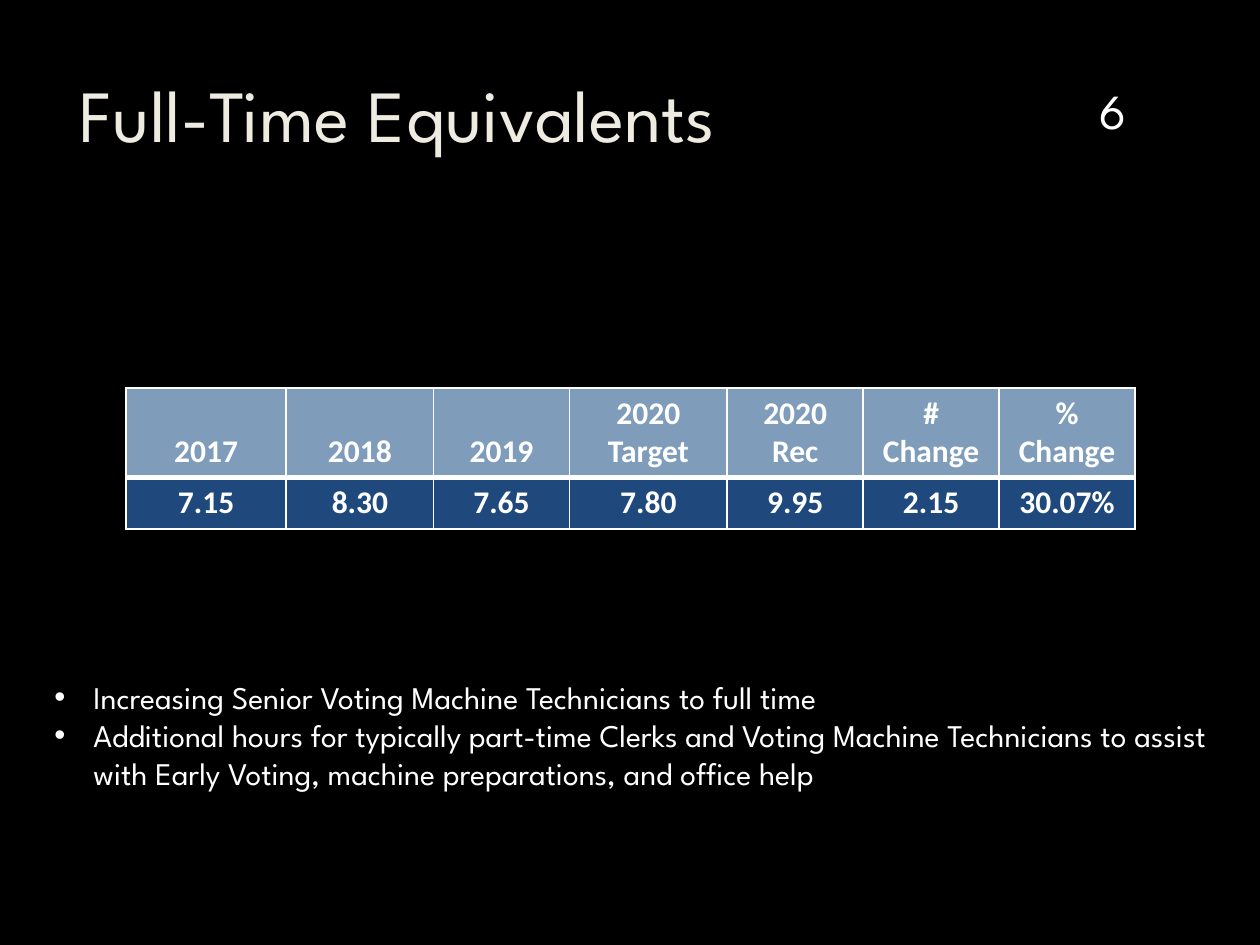
from pptx import Presentation
from pptx.dml.color import RGBColor
from pptx.enum.text import MSO_ANCHOR, MSO_AUTO_SIZE, PP_ALIGN
from pptx.oxml.ns import qn
from pptx.util import Cm, Pt
from lxml import etree

TOP, BOTTOM = MSO_ANCHOR.TOP, MSO_ANCHOR.BOTTOM
LEFT, CENTER = PP_ALIGN.LEFT, PP_ALIGN.CENTER
NO_FIT = MSO_AUTO_SIZE.NONE

HEADING_FONT, TABLE_FONT = "League Spartan", "Calibri"
BLACK, WHITE, CREAM = "000000", "FFFFFF", "EEECE1"
HEADER_BLUE, VALUE_BLUE = "7F9DBB", "1F497D"

FTE_COLUMNS = [
    # header, value, width in cm
    ("2017", "7.15", 3.23),
    ("2018", "8.30", 2.97),
    ("2019", "7.65", 2.74),
    ("2020 Target", "7.80", 3.18),
    ("2020\nRec", "9.95", 2.74),
    ("#\nChange", "2.15", 2.74),
    ("%\nChange", "30.07%", 2.74),
]
ROW_HEIGHTS = (1.78, 1.04)
REASONS = [
    "Increasing Senior Voting Machine Technicians to full time",
    "Additional hours for typically part-time Clerks and Voting Machine "
    "Technicians to assist with Early Voting, machine preparations, and office help",
]


def color(hex_code):
    return RGBColor.from_string(hex_code)


def place(shape, box):
    shape.left, shape.top, shape.width, shape.height = (Cm(length) for length in box)


def format_text(frame, font_name, size, hex_code, align, bold=False):
    for paragraph in frame.paragraphs:
        paragraph.alignment = align
        for run in paragraph.runs:
            run.font.name = font_name
            run.font.size = Pt(size)
            run.font.bold = bold
            run.font.color.rgb = color(hex_code)


def add_title(slide, box):
    title = slide.shapes.title
    place(title, box)
    frame = title.text_frame
    frame.text = "Full-Time Equivalents"
    frame.vertical_anchor = TOP
    frame.auto_size = NO_FIT
    format_text(frame, HEADING_FONT, 42, CREAM, LEFT)


def add_page_number(slide, box):
    frame = slide.shapes.add_textbox(*(Cm(length) for length in box)).text_frame
    frame.word_wrap = True
    frame.vertical_anchor = BOTTOM
    frame.text = "6"
    format_text(frame, HEADING_FONT, 28, WHITE, CENTER)


def set_border(cell, side, width):
    line = etree.SubElement(cell._tc.get_or_add_tcPr(), qn(f"a:ln{side}"), w=str(Pt(width)))
    fill = etree.SubElement(line, qn("a:solidFill"))
    etree.SubElement(fill, qn("a:srgbClr"), val=WHITE)


def add_fte_table(slide, left, top):
    widths = [width for _, _, width in FTE_COLUMNS]
    table = slide.shapes.add_table(
        len(ROW_HEIGHTS), len(FTE_COLUMNS),
        Cm(left), Cm(top), Cm(sum(widths)), Cm(sum(ROW_HEIGHTS)),
    ).table
    for row, height in zip(table.rows, ROW_HEIGHTS):
        row.height = Cm(height)

    for column, (header, value, width) in enumerate(FTE_COLUMNS):
        table.columns[column].width = Cm(width)
        # A heavy rule separates the header from the values
        for row, text, fill, anchor, heavy_side in (
            (0, header, HEADER_BLUE, BOTTOM, "B"),
            (1, value, VALUE_BLUE, TOP, "T"),
        ):
            cell = table.cell(row, column)
            cell.text = text
            cell.vertical_anchor = anchor
            format_text(cell.text_frame, TABLE_FONT, 18, WHITE, CENTER, bold=True)
            for side in "LRTB":
                set_border(cell, side, 3 if side == heavy_side else 1)
            cell.fill.solid()
            cell.fill.fore_color.rgb = color(fill)


def add_reasons(slide, box):
    body = slide.placeholders[1]
    place(body, box)
    frame = body.text_frame
    frame.text = "\n".join(REASONS)
    frame.vertical_anchor = TOP
    frame.auto_size = NO_FIT
    indent = Cm(0.79)
    for paragraph in frame.paragraphs:
        properties = paragraph._p.get_or_add_pPr()
        properties.set("marL", str(indent))
        properties.set("indent", str(-indent))
        etree.SubElement(properties, qn("a:buFont"), typeface="Arial")
        etree.SubElement(properties, qn("a:buChar"), char="•")
        paragraph.space_before = Pt(0)
    format_text(frame, HEADING_FONT, 18, WHITE, LEFT)


def main():
    presentation = Presentation()
    presentation.slide_width, presentation.slide_height = Cm(25.4), Cm(19.05)
    slide = presentation.slides.add_slide(presentation.slide_layouts[1])
    background = slide.background.fill
    background.solid()
    background.fore_color.rgb = color(BLACK)

    add_title(slide, (1.35, 1.27, 19.61, 3.89))
    add_fte_table(slide, 2.54, 7.82)
    add_page_number(slide, (21.56, 0.81, 1.75, 2.13))
    add_reasons(slide, (0.84, 13.54, 24.13, 3.33))
    presentation.save("out.pptx")


if __name__ == "__main__":
    main()
